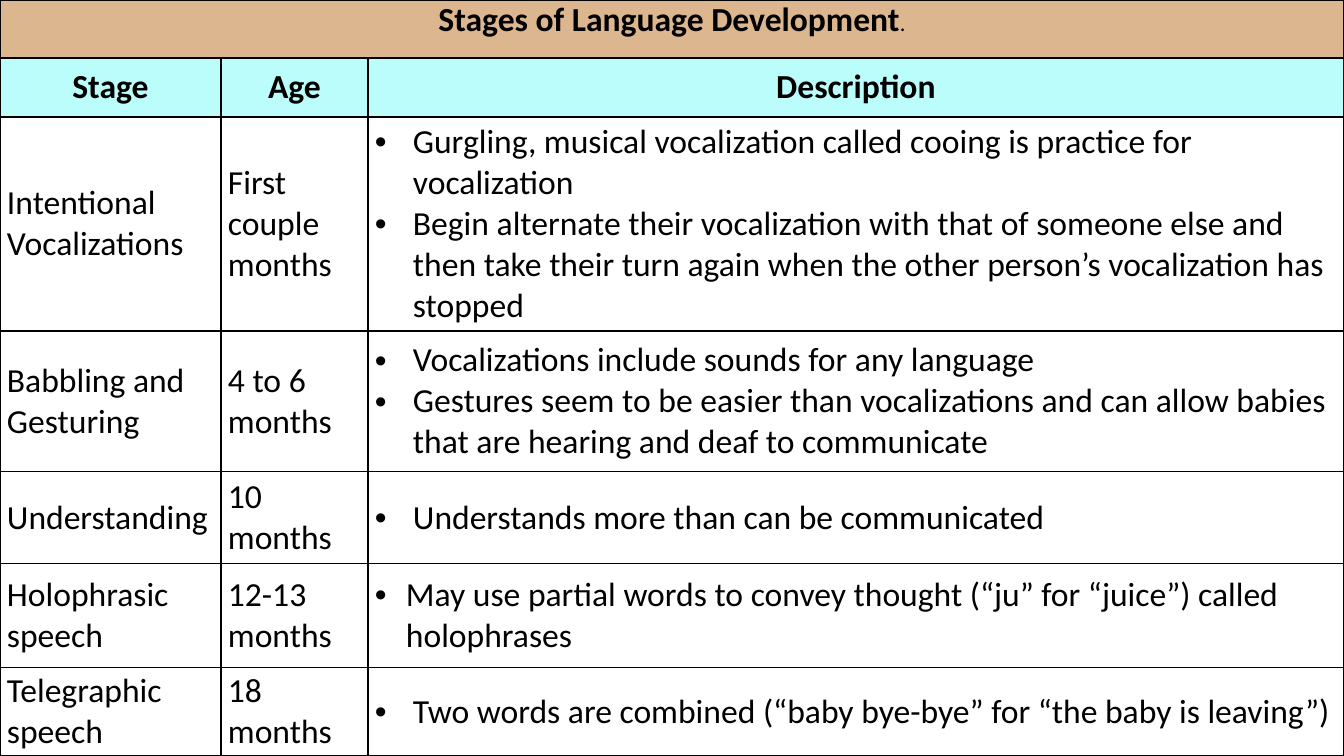
from dataclasses import dataclass

from lxml.etree import SubElement
from pptx import Presentation
from pptx.dml.color import RGBColor
from pptx.enum.text import MSO_ANCHOR as Anchor, PP_ALIGN as Align
from pptx.oxml.ns import qn
from pptx.util import Emu, Pt

EMU_PER_PX = 914400 / 100.8
SLIDE_WIDTH, SLIDE_HEIGHT = 1344, 756


def px(count):
    return Emu(round(count * EMU_PER_PX))


@dataclass(frozen=True)
class Theme:
    font: str = "Calibri"
    bullet_font: str = "Arial"
    ink: str = "000000"
    title_fill: str = "DBB68F"
    header_fill: str = "BBFDFB"
    text_size: int = 24
    period_size: int = 16
    space_after: int = 8
    border: int = 1
    cell_inset: int = 7
    bullet_indent: int = 38


COLUMN_WIDTHS = [221, 147, 976]
ROW_HEIGHTS = [58, 59, 214, 141, 92, 104, 88]
TITLE = "Stages of Language Development"
HEADERS = ["Stage", "Age", "Description"]
STAGES = [
    ("Intentional Vocalizations", "First couple months", [
        "Gurgling, musical vocalization called cooing is practice for vocalization",
        "Begin alternate their vocalization with that of someone else and then take "
        "their turn again when the other person’s vocalization has stopped",
    ]),
    ("Babbling and Gesturing", "4 to 6 months", [
        "Vocalizations include sounds for any language",
        "Gestures seem to be easier than vocalizations and can allow babies "
        "that are hearing and deaf to communicate",
    ]),
    ("Understanding", "10 months", ["Understands more than can be communicated"]),
    ("Holophrasic speech", "12-13 months", [
        "May use partial words to convey thought (“ju” for “juice”) called holophrases",
    ]),
    ("Telegraphic speech", "18 months", [
        "Two words are combined (“baby bye-bye” for “the baby is leaving”)",
    ]),
]
NARROW_INDENTS = {"Holophrasic speech": 31}


class StageSlide:
    def __init__(self, slide, theme):
        self.slide = slide
        self.theme = theme

    def table(self, widths, heights):
        frame = self.slide.shapes.add_table(
            len(heights), len(widths), 0, 0, px(sum(widths)), px(sum(heights)))
        table = frame.table
        table.first_row = table.horz_banding = False
        for column, width in zip(table.columns, widths):
            column.width = px(width)
        for row, height in zip(table.rows, heights):
            row.height = px(height)
        for cell in table.iter_cells():
            self.prepare(cell)
        return table

    def prepare(self, cell):
        """Give a cell its insets, borders and an empty fill."""
        cell.margin_left = cell.margin_right = px(self.theme.cell_inset)
        cell.margin_top = cell.margin_bottom = 0
        cell.vertical_anchor = Anchor.MIDDLE
        properties = cell._tc.get_or_add_tcPr()
        for side in ("lnL", "lnR", "lnT", "lnB"):
            line = SubElement(properties, qn(f"a:{side}"), w=str(Pt(self.theme.border)))
            solid = SubElement(line, qn("a:solidFill"))
            SubElement(solid, qn("a:srgbClr"), val=self.theme.ink)
        cell.fill.background()

    def paint(self, cell, color):
        cell.fill.solid()
        cell.fill.fore_color.rgb = RGBColor.from_string(color)

    def span(self, para, text, *, size=None, bold=False):
        span = para.add_run()
        span.text = text
        span.font.name = self.theme.font
        span.font.size = Pt(size or self.theme.text_size)
        span.font.bold = bold
        span.font.color.rgb = RGBColor.from_string(self.theme.ink)

    def text(self, para, text, *, bold=False, align=Align.LEFT, after=0):
        para.alignment = align
        para.space_after = Pt(after)
        self.span(para, text, bold=bold)

    def heading(self, cell, text, color):
        self.paint(cell, color)
        para = cell.text_frame.paragraphs[0]
        self.text(para, text, bold=True, align=Align.CENTER, after=self.theme.space_after)
        return para

    def bullets(self, cell, items, indent):
        frame = cell.text_frame
        for index, item in enumerate(items):
            para = frame.add_paragraph() if index else frame.paragraphs[0]
            self.text(para, item)
            properties = para._p.get_or_add_pPr()
            properties.set("marL", str(px(indent)))
            properties.set("indent", str(-px(indent)))
            SubElement(properties, qn("a:buFont"), typeface=self.theme.bullet_font)
            SubElement(properties, qn("a:buChar"), char="•")


def main():
    deck = Presentation()
    deck.slide_width, deck.slide_height = px(SLIDE_WIDTH), px(SLIDE_HEIGHT)
    theme = Theme()
    page = StageSlide(deck.slides.add_slide(deck.slide_layouts[6]), theme)
    table = page.table(COLUMN_WIDTHS, ROW_HEIGHTS)

    title = table.cell(0, 0)
    title.merge(table.cell(0, len(HEADERS) - 1))
    title.vertical_anchor = Anchor.TOP
    para = page.heading(title, TITLE, theme.title_fill)
    page.span(para, ".", size=theme.period_size)

    for column, header in enumerate(HEADERS):
        page.heading(table.cell(1, column), header, theme.header_fill)

    for row, (stage, age, description) in enumerate(STAGES, start=2):
        page.text(table.cell(row, 0).text_frame.paragraphs[0], stage,
                  after=theme.space_after)
        page.text(table.cell(row, 1).text_frame.paragraphs[0], age)
        indent = NARROW_INDENTS.get(stage, theme.bullet_indent)
        page.bullets(table.cell(row, 2), description, indent)

    deck.save("out.pptx")


if __name__ == "__main__":
    main()
